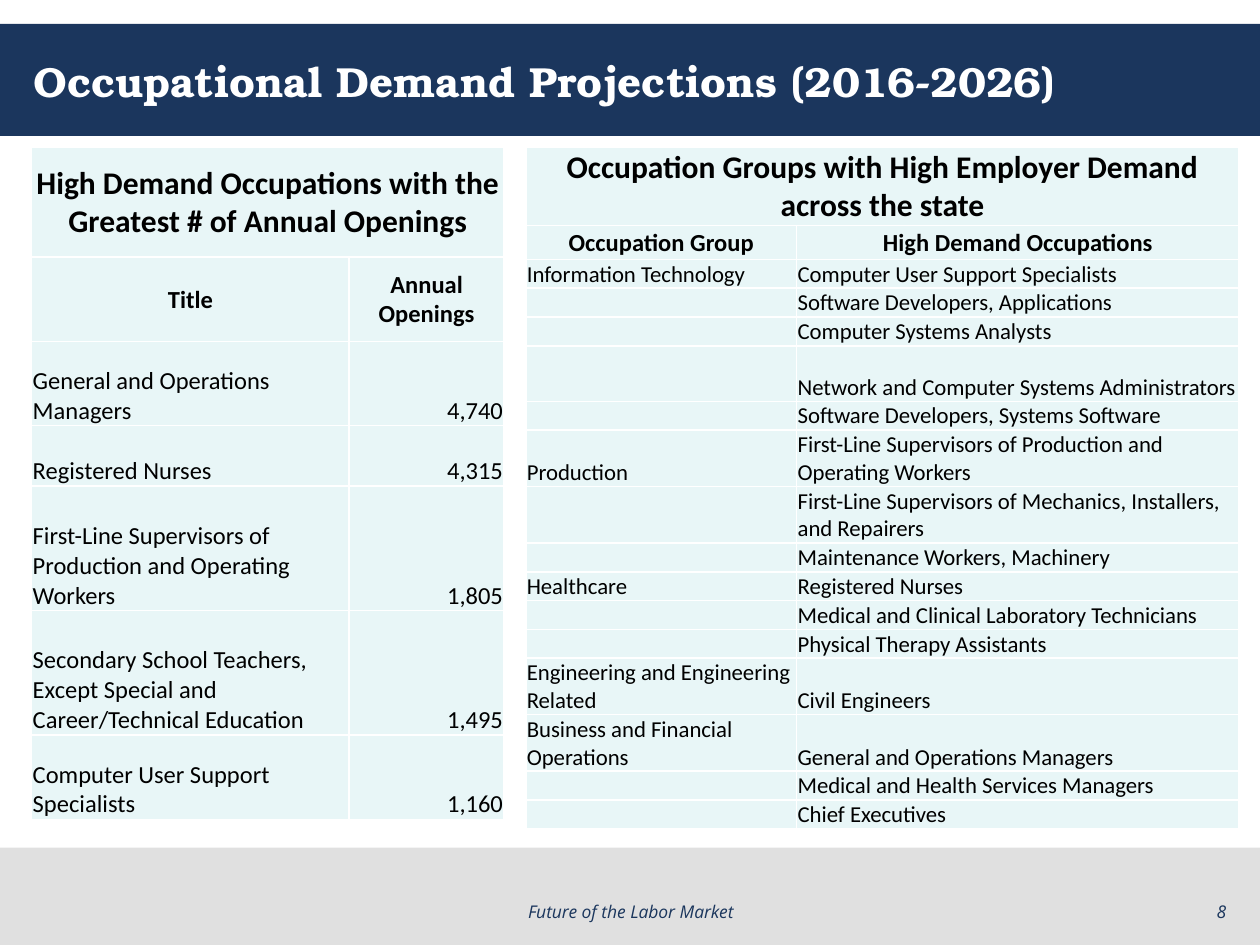
from dataclasses import dataclass

from lxml.etree import SubElement
from pptx import Presentation
from pptx.dml.color import RGBColor
from pptx.enum.shapes import MSO_SHAPE as Shape
from pptx.enum.text import MSO_ANCHOR as Anchor, MSO_AUTO_SIZE as AutoSize, PP_ALIGN as Align
from pptx.oxml.ns import qn
from pptx.util import Cm, Pt


@dataclass(frozen=True)
class Theme:
    navy: str = "1B365D"
    gray: str = "E0E0E0"
    mint: str = "E8F6F7"
    white: str = "FFFFFF"
    black: str = "000000"
    title_font: str = "TeX Gyre Bonum"
    table_font: str = "Calibri"
    footer_font: str = "Open Sans"
    title_size: int = 24
    heading_size: int = 18
    header_size: int = 14
    group_size: int = 13
    footer_size: int = 10


theme = Theme()


def set_font(para, name, size, color, bold=False, italic=False):
    para.font.name = name
    para.font.size = Pt(size)
    para.font.bold = bold
    para.font.italic = italic
    para.font.color.rgb = RGBColor.from_string(color)


def style_cell(cell, size, bold, align, anchor):
    cell.margin_left = cell.margin_right = cell.margin_top = Cm(0.02)
    cell.margin_bottom = 0
    cell.vertical_anchor = anchor
    properties = cell._tc.get_or_add_tcPr()
    for side in ("a:lnL", "a:lnR", "a:lnT", "a:lnB"):
        line = SubElement(properties, qn(side), w=str(Pt(1)))
        SubElement(SubElement(line, qn("a:solidFill")), qn("a:srgbClr"), val=theme.white)
    cell.fill.solid()
    cell.fill.fore_color.rgb = RGBColor.from_string(theme.mint)
    para = cell.text_frame.paragraphs[0]
    para.alignment = align
    set_font(para, theme.table_font, size, theme.black, bold)
    if not cell.text:
        SubElement(para._p, qn("a:endParaRPr"), sz=str(size * 100))


deck = Presentation()
deck.slide_width, deck.slide_height = Cm(25.4), Cm(19.05)
page = deck.slides.add_slide(deck.slide_layouts[5])

title = page.shapes.title
title.left, title.top, title.width, title.height = Cm(0.42), Cm(0.48), Cm(24.56), Cm(2.29)
title.text = "Occupational Demand Projections (2016-2026)"
title.text_frame.auto_size = AutoSize.NONE
title.text_frame.vertical_anchor = Anchor.MIDDLE
title_para = title.text_frame.paragraphs[0]
title_para.alignment = Align.LEFT
set_font(title_para, theme.title_font, theme.title_size, theme.white, bold=True)

for top, height, color in ((0.48, 2.26, theme.navy), (17.09, 1.96, theme.gray)):
    band = page.shapes.add_shape(Shape.RECTANGLE, 0, Cm(top), deck.slide_width, Cm(height))
    band.shadow.inherit = False
    band.fill.solid()
    band.fill.fore_color.rgb = RGBColor.from_string(color)
    band.line.fill.background()
    title._element.addprevious(band._element)

openings = [
    ("High Demand Occupations with the Greatest # of Annual Openings", ""),
    ("Title", "Annual Openings"),
    ("General and Operations Managers", "4,740"),
    ("Registered Nurses", "4,315"),
    ("First-Line Supervisors of Production and Operating Workers", "1,805"),
    ("Secondary School Teachers, Except Special and Career/Technical Education", "1,495"),
    ("Computer User Support Specialists", "1,160"),
]
groups = [
    ("Occupation Groups with High Employer Demand across the state", ""),
    ("Occupation Group", "High Demand Occupations"),
    ("Information Technology", "Computer User Support Specialists"),
    ("", "Software Developers, Applications"),
    ("", "Computer Systems Analysts"),
    ("", "Network and Computer Systems Administrators"),
    ("", "Software Developers, Systems Software"),
    ("Production", "First-Line Supervisors of Production and Operating Workers"),
    ("", "First-Line Supervisors of Mechanics, Installers, and Repairers"),
    ("", "Maintenance Workers, Machinery"),
    ("Healthcare", "Registered Nurses"),
    ("", "Medical and Clinical Laboratory Technicians"),
    ("", "Physical Therapy Assistants"),
    ("Engineering and Engineering Related", "Civil Engineers"),
    ("Business and Financial Operations", "General and Operations Managers"),
    ("", "Medical and Health Services Managers"),
    ("", "Chief Executives"),
]
single, double = 0.58, 1.12
openings_heights = [2.21, 1.7, 1.7, 1.22, 2.51, 2.51, 1.7]
groups_heights = [1.55, 0.69] + [single] * 3 + [double, single, double, double]
groups_heights += [single] * 4 + [double] * 2 + [single] * 2

tables = (
    (openings, 0.64, (6.4, 3.12), openings_heights, theme.header_size, Align.RIGHT, Anchor.MIDDLE),
    (groups, 10.6, (5.46, 8.92), groups_heights, theme.group_size, Align.LEFT, Anchor.BOTTOM),
)
for rows, left, widths, heights, body_size, last_align, heading_anchor in tables:
    frame = page.shapes.add_table(
        len(rows), 2, Cm(left), Cm(2.97), Cm(sum(widths)), Cm(sum(heights))
    )
    table = frame.table
    for column, width in zip(table.columns, widths):
        column.width = Cm(width)
    for row_index, (texts, height) in enumerate(zip(rows, heights)):
        table.rows[row_index].height = Cm(height)
        for column_index, text in enumerate(texts):
            cell = table.cell(row_index, column_index)
            cell.text = text
            if row_index == 0:
                style_cell(cell, theme.heading_size, True, Align.CENTER, heading_anchor)
            elif row_index == 1:
                style_cell(cell, theme.header_size, True, Align.CENTER, Anchor.MIDDLE)
            else:
                align = last_align if column_index else Align.LEFT
                style_cell(cell, body_size, False, align, Anchor.BOTTOM)
    table.cell(0, 0).merge(table.cell(0, 1))

footers = (
    ("Future of the Labor Market", 8.69, 8.05, Align.CENTER),
    ("8", 19.05, 5.92, Align.RIGHT),
)
for text, left, width, align in footers:
    box = page.shapes.add_textbox(Cm(left), Cm(17.7), Cm(width), Cm(1.02))
    box.text_frame.word_wrap = True
    box.text_frame.vertical_anchor = Anchor.BOTTOM
    para = box.text_frame.paragraphs[0]
    para.text = text
    para.alignment = align
    set_font(para, theme.footer_font, theme.footer_size, theme.navy, italic=True)

deck.save("out.pptx")
